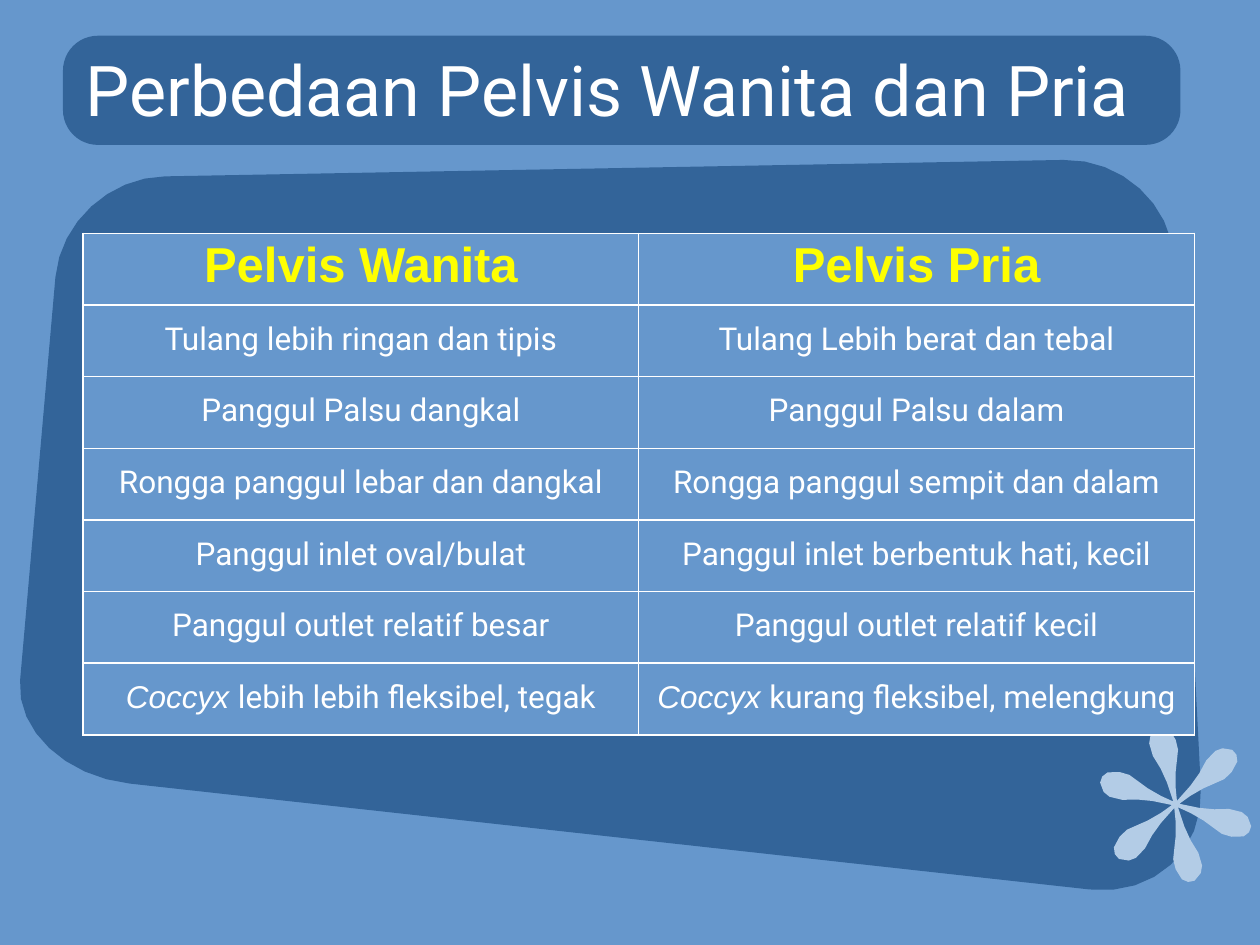
import math

import pptx
import pptx.dml.color
import pptx.enum.shapes
import pptx.enum.text
import pptx.util
from lxml import etree

Pt = pptx.util.Pt
RGB = pptx.dml.color.RGBColor
ALIGN = pptx.enum.text.PP_ALIGN
ANCHOR = pptx.enum.text.MSO_ANCHOR
SHAPE = pptx.enum.shapes.MSO_SHAPE

TITLE = "Perbedaan Pelvis Wanita dan Pria"
HEADS = ("Pelvis Wanita", "Pelvis Pria")
TERM = "Coccyx "  # set in italics wherever it opens a cell
ROWS = [
    ("Tulang lebih ringan dan tipis", "Tulang Lebih berat dan tebal"),
    ("Panggul Palsu dangkal", "Panggul Palsu dalam"),
    ("Rongga panggul lebar dan dangkal", "Rongga panggul sempit dan dalam"),
    ("Panggul inlet oval/bulat", "Panggul inlet berbentuk hati, kecil"),
    ("Panggul outlet relatif besar", "Panggul outlet relatif kecil"),
    ("Coccyx lebih lebih fleksibel, tegak", "Coccyx kurang fleksibel, melengkung"),
]

SKY = RGB(0x66, 0x97, 0xCC)
NAVY = RGB(0x33, 0x64, 0x99)
PALE = RGB(0xB3, 0xCC, 0xE6)
WHITE = RGB(0xFF, 0xFF, 0xFF)
YELLOW = RGB(0xFF, 0xFF, 0x00)

WIDE, HIGH = 720, 540
# Each panel corner: start of the curve, sharp corner, end of the curve
PANEL = [
    ((94.3, 100.8), (36.7, 101.5), (31.7, 158.4)),
    ((11.5, 388.8), (7.2, 440.6), (74.2, 447.8)),
    ((622.8, 508.3), (689.8, 515.5), (686.2, 450)),
    ((671, 149), (668.2, 90), (607.7, 91.4)),
]
# One petal, measured from the middle of the flower
HUB = (671.8, 459.7)
PETAL = [
    (-1.4, -1.8), (-5, -12.6), (-8.6, -20.5), (-13, -27.7), (-15.1, -34.9),
    (-14.4, -39.2), (-10.8, -43.6), (-7.2, -44.3), (-3.6, -42.8), (0, -37),
    (1.4, -31.3), (0.7, -24.8), (0, -18.4), (0, -9.7), (0.7, -2.5),
]
PETALS = 6


def write(para, text, font="Roboto", size=18, color=WHITE, bold=False,
          italic=False, align=ALIGN.CENTER):
    para.alignment = align
    run = para.add_run()
    run.text = text
    face = run.font
    face.name, face.size, face.bold, face.italic = font, Pt(size), bold, italic
    face.color.rgb = color


def paint(shape, color):
    shape.shadow.inherit = False
    shape.fill.solid()
    shape.fill.fore_color.rgb = color
    shape.line.fill.background()
    return shape


def block(slide, kind, box, color):
    return paint(slide.shapes.add_shape(kind, *map(Pt, box)), color)


def outline(slide, points, color):
    spots = [(Pt(x), Pt(y)) for x, y in points]
    pen = slide.shapes.build_freeform(*spots[0])
    pen.add_line_segments(spots[1:], close=True)
    return paint(pen.convert_to_shape(), color)


def bend(start, apex, end, steps=8, pull=0.55):
    """Points on a Bezier curve that rounds off one corner."""
    near = [s + pull * (a - s) for s, a in zip(start, apex)]
    far = [e + pull * (a - e) for e, a in zip(end, apex)]
    for step in range(steps + 1):
        t = step / steps
        u = 1 - t
        yield tuple(u**3 * s + 3 * u * u * t * n + 3 * u * t * t * f + t**3 * e
                    for s, n, f, e in zip(start, near, far, end))


def flower():
    for turn in range(PETALS):
        angle = turn * math.tau / PETALS
        cos, sin = math.cos(angle), math.sin(angle)
        for x, y in PETAL:
            yield HUB[0] + x * cos - y * sin, HUB[1] + x * sin + y * cos


def edge(cell, color):
    """Draw a one-point border on all four sides of a cell."""
    space = "{http://schemas.openxmlformats.org/drawingml/2006/main}"
    props = cell._tc.get_or_add_tcPr()
    for spot, side in enumerate(("lnL", "lnR", "lnT", "lnB")):
        line = etree.Element(space + side, w=str(Pt(1)))
        fill = etree.SubElement(line, space + "solidFill")
        etree.SubElement(fill, space + "srgbClr", val=str(color))
        props.insert(spot, line)


def inset(frame, left=0, top=0):
    frame.margin_left, frame.margin_top = Pt(left), Pt(top)
    frame.margin_right = frame.margin_bottom = 0


def heading(slide):
    title = slide.shapes.title
    title.left, title.top, title.width, title.height = map(Pt, (48.2, 25.9, 611.3, 49.7))
    frame = title.text_frame
    inset(frame, left=0.9, top=0.9)
    frame.word_wrap = True
    frame.vertical_anchor = ANCHOR.TOP
    frame.auto_size = pptx.enum.text.MSO_AUTO_SIZE.SHAPE_TO_FIT_TEXT
    frame.paragraphs[0].space_before = Pt(0.9)
    write(frame.paragraphs[0], TITLE, size=40, align=ALIGN.LEFT)
    title.element.getparent().append(title.element)


def grid(slide):
    lines = [HEADS] + ROWS
    left, top, width, pitch = 47.5, 133.4, 317.5, 40.95
    table = slide.shapes.add_table(
        len(lines), len(HEADS), Pt(left), Pt(top),
        Pt(width * len(HEADS)), Pt(pitch * len(lines))).table
    table.first_row = table.horz_banding = False
    for col in table.columns:
        col.width = Pt(width)
    for r, line in enumerate(lines):
        table.rows[r].height = Pt(pitch)
        for c, text in enumerate(line):
            cell = table.cell(r, c)
            inset(cell, top=9.2 if r else 3)
            cell.vertical_anchor = ANCHOR.TOP
            cell.fill.solid()
            cell.fill.fore_color.rgb = SKY
            edge(cell, WHITE)
            para = cell.text_frame.paragraphs[0]
            if r == 0:
                write(para, text, font="Arial", size=28, color=YELLOW, bold=True)
                continue
            if text.startswith(TERM):
                write(para, TERM, font="Arial", italic=True)
            write(para, text.removeprefix(TERM))


def main():
    deck = pptx.Presentation()
    deck.slide_width, deck.slide_height = Pt(WIDE), Pt(HIGH)
    slide = deck.slides.add_slide(deck.slide_layouts[5])
    block(slide, SHAPE.RECTANGLE, (0, 0, WIDE, HIGH), SKY)
    outline(slide, [spot for corner in PANEL for spot in bend(*corner)], NAVY)
    outline(slide, flower(), PALE)
    bar = block(slide, SHAPE.ROUNDED_RECTANGLE, (36, 20.4, 638.6, 62.4), NAVY)
    bar.adjustments[0] = 0.32
    heading(slide)
    grid(slide)
    deck.save("out.pptx")


if __name__ == "__main__":
    main()
